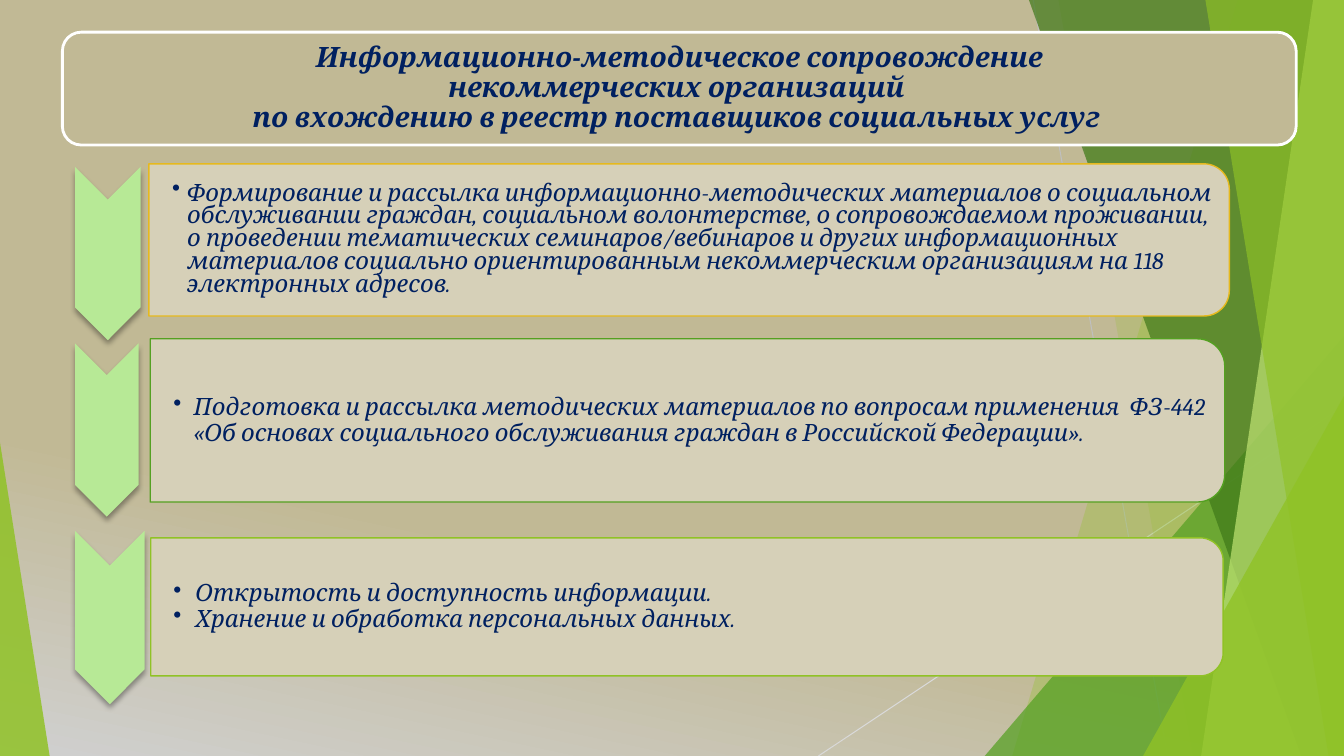
"""Builds the slide on information support for non-profit organisations."""
from lxml import etree
from pptx import Presentation
from pptx.dml.color import RGBColor
from pptx.enum import shapes, text
from pptx.oxml import ns
from pptx.util import Pt


def tint(color, hex_value):
    color.rgb = RGBColor.from_string(hex_value)


def write(frame, lines, size=17, bold=False, align=text.PP_ALIGN.LEFT,
          spacing=0.9, indent=None, hanging=0, insets=(7.2, 3.6, 7.2, 3.6)):
    frame.word_wrap = True
    frame.auto_size = text.MSO_AUTO_SIZE.NONE
    frame.vertical_anchor = text.MSO_ANCHOR.MIDDLE
    (frame.margin_left, frame.margin_top,
     frame.margin_right, frame.margin_bottom) = map(Pt, insets)
    for number, line in enumerate(lines):
        paragraph = frame.add_paragraph() if number else frame.paragraphs[0]
        paragraph.text = line
        paragraph.alignment = align
        paragraph.line_spacing = spacing
        if indent:
            properties = paragraph._p.get_or_add_pPr()
            properties.set("marL", str(Pt(indent)))
            properties.set("indent", str(Pt(-hanging)))
            etree.SubElement(properties, ns.qn("a:buChar"), char="•")
        for run in paragraph.runs:
            run.font.name, run.font.size = "Cambria", Pt(size)
            run.font.bold, run.font.italic = bold, True
            tint(run.font.color, "002060")


deck = Presentation()
deck.slide_width, deck.slide_height = Pt(960), Pt(540)
slide = deck.slides.add_slide(deck.slide_layouts[5])
canvas = slide.shapes

backdrop = slide.background.fill
backdrop.gradient()
backdrop.gradient_angle = 258
for stop, (position, color) in zip(backdrop.gradient_stops, [(0.69, "C1B995"), (1, "D0D0D0")]):
    stop.position = position
    tint(stop.color, color)

for start_x, start_y, end_x, end_y, color in [
        (738, 0, 834, 540, "BFBFBF"), (960, 290, 584.6, 540, "D9D9D9")]:
    ray = canvas.add_connector(shapes.MSO_CONNECTOR.STRAIGHT,
                               Pt(start_x), Pt(start_y), Pt(end_x), Pt(end_y))
    ray.line.width = Pt(0.75)
    tint(ray.line.color, color)
    etree.SubElement(ray._element.spPr, ns.qn("a:effectLst"))

# Facets give top and bottom x; peaks give left, top, width and apex.
FACETS = [
    ((884, 723), "90C226", 30),
    ((756, 852), "90C226", 20),
    ((703.4, 240, 256.6, 1), "54A021", 72),
    ((735, 929.5), "3F7819", 70),
    ((938, 858), "C0E474", 70),
    ((861, 949), "90C226", 65),
    ((816.5, 283, 143.5, 1), "90C226", 80),
    ((0, 316, 35.5, 0), "90C226", 85),
]
for bounds, color, opacity in FACETS:
    if len(bounds) == 2:
        top_x, bottom_x = bounds
        outline = canvas.build_freeform(Pt(top_x), 0)
        outline.add_line_segments([(Pt(960), 0), (Pt(960), Pt(540)), (Pt(bottom_x), Pt(540))])
        facet = outline.convert_to_shape()
    else:
        left, top, width, apex = bounds
        facet = canvas.add_shape(shapes.MSO_SHAPE.ISOSCELES_TRIANGLE,
                                 Pt(left), Pt(top), Pt(width), Pt(540 - top))
        facet.adjustments[0] = apex
    facet.shadow.inherit = False
    facet.line.fill.background()
    facet.fill.solid()
    tint(facet.fill.fore_color, color)
    solid = facet._element.spPr.find(ns.qn("a:solidFill"))
    etree.SubElement(solid[0], ns.qn("a:alpha"), val=str(opacity * 1000))

heading_area = Pt(44.6), Pt(23), Pt(881.3), Pt(80.6)
banner = canvas.add_shape(shapes.MSO_SHAPE.ROUNDED_RECTANGLE, *heading_area)
banner.shadow.inherit = False
banner.fill.solid()
tint(banner.fill.fore_color, "C1B995")
banner.line.width = Pt(2)
tint(banner.line.color, "FFFFFF")

heading = canvas.title
heading.left, heading.top, heading.width, heading.height = heading_area
canvas._spTree.append(heading._element)
write(heading.text_frame,
      ["Информационно-методическое сопровождение",
       "некоммерческих организаций ",
       "по вхождению в реестр поставщиков социальных услуг "],
      size=20, bold=True, align=text.PP_ALIGN.CENTER, spacing=0.88)

STEPS = [
    ((53.6, 119.2, 46.8, 123.8), (106.3, 117, 771.8, 108.7), "E6B91E", 18, 10.8, 0.8,
     ["Формирование и рассылка информационно-методических материалов о социальном "
      "обслуживании граждан, социальном волонтерстве, о сопровождаемом проживании, \v"
      "о проведении тематических семинаров/вебинаров и других информационных материалов "
      "социально ориентированным некоммерческим организациям на 118 электронных адресов."]),
    ((53.6, 245.2, 45.4, 123.8), (107.3, 242, 767.5, 116.6), "54A021", 21.6, 14.4, 0.9,
     ["Подготовка и рассылка методических материалов по вопросам применения  ФЗ-442\v"
      "«Об основах социального обслуживания граждан в Российской Федерации»."]),
    ((53.6, 379.2, 49.7, 123.8), (107.7, 384.2, 766, 98.6), "90C226", 22.5, 15.8, 0.9,
     ["Открытость и доступность информации.",
      "Хранение и обработка персональных данных."]),
]
for arrow_area, card_area, border, indent, hanging, spacing, lines in STEPS:
    turned = []
    for preset, (left, top, width, height), color in [
            (shapes.MSO_SHAPE.CHEVRON, arrow_area, "B7E996"),
            (shapes.MSO_SHAPE.ROUND_2_SAME_RECTANGLE, card_area, "D6D0B8")]:
        part = canvas.add_shape(preset, Pt(left + (width - height) / 2),
                                Pt(top + (height - width) / 2), Pt(height), Pt(width))
        part.rotation = 90
        part.shadow.inherit = False
        part.fill.solid()
        tint(part.fill.fore_color, color)
        turned.append(part)
    arrow, card = turned
    arrow.line.fill.background()
    effects = arrow._element.spPr.find(ns.qn("a:effectLst"))
    shade = etree.SubElement(effects, ns.qn("a:outerShdw"), blurRad=str(Pt(4)),
                             dist=str(Pt(3)), dir="5400000", rotWithShape="0")
    black = etree.SubElement(shade, ns.qn("a:srgbClr"), val="000000")
    etree.SubElement(black, ns.qn("a:alpha"), val="35000")
    card.line.width = Pt(1)
    tint(card.line.color, border)

    left, top, width, height = card_area
    message = canvas.add_textbox(Pt(left), Pt(top + 5), Pt(width - 5), Pt(height - 10))
    write(message.text_frame, lines, spacing=spacing, indent=indent, hanging=hanging,
          insets=(9.4, 0.7, 0.7, 0.7))

deck.save("out.pptx")
